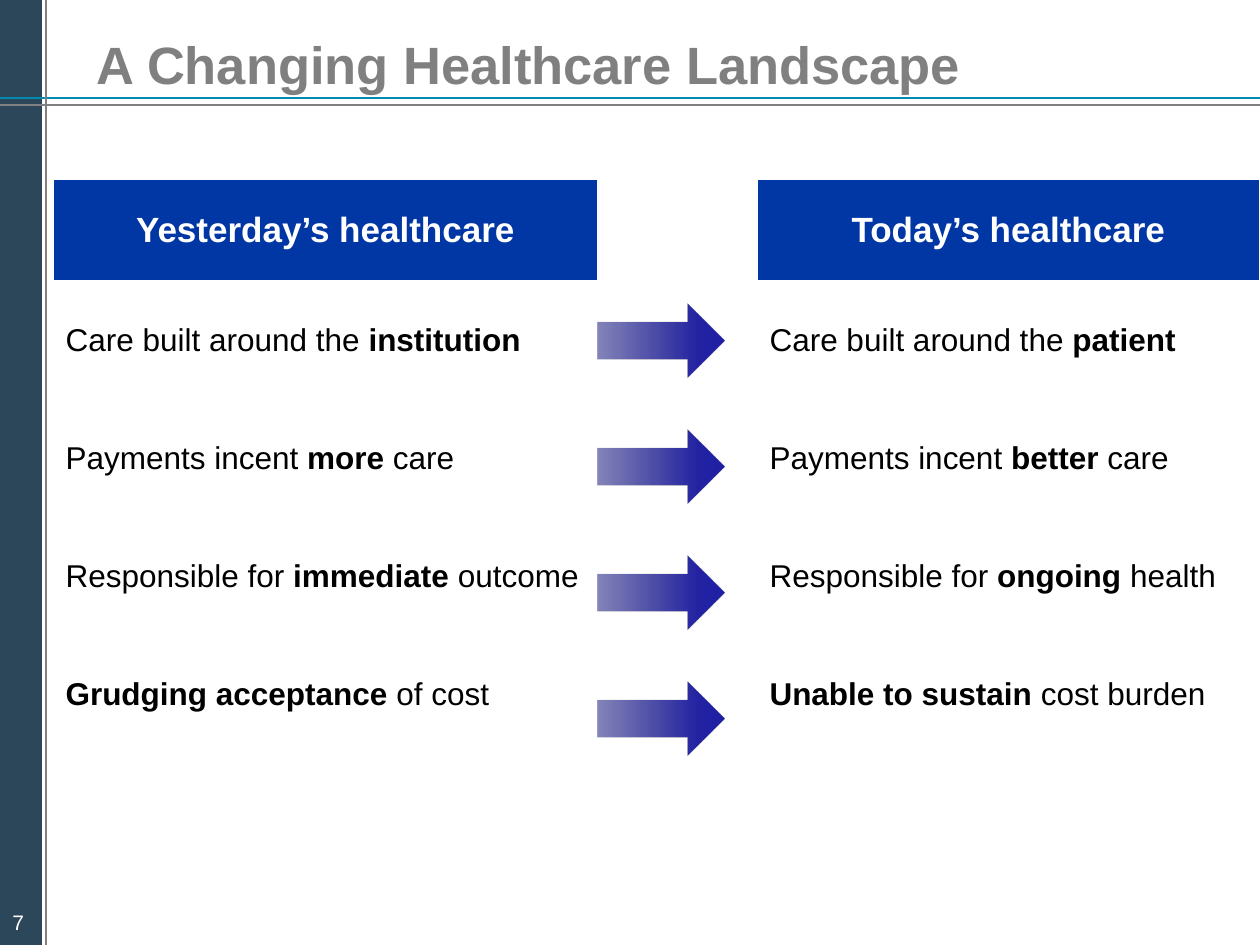
from dataclasses import dataclass

from lxml.etree import SubElement
from pptx import Presentation
from pptx.dml.color import RGBColor
from pptx.enum.shapes import MSO_CONNECTOR, MSO_SHAPE
from pptx.enum.text import MSO_ANCHOR, PP_ALIGN
from pptx.oxml.ns import qn
from pptx.util import Emu, Pt

TITLE = "A Changing Healthcare Landscape"
PAGE_NUMBER = "7"
HEADERS = ("Yesterday’s healthcare", "Today’s healthcare")
# Each statement is a list of (text, bold) spans.
COMPARISONS = [
    ([("Care built around the ", False), ("institution", True)],
     [("Care built around the ", False), ("patient", True)]),
    ([("Payments incent ", False), ("more", True), (" care", False)],
     [("Payments incent ", False), ("better", True), (" care", False)]),
    ([("Responsible for ", False), ("immediate ", True), ("outcome", False)],
     [("Responsible for ", False), ("ongoing", True), (" health", False)]),
    ([("Grudging acceptance ", True), ("of cost", False)],
     [("Unable to sustain ", True), ("cost burden", False)]),
]


@dataclass(frozen=True)
class Theme:
    font: str = "Arial"
    sidebar: str = "2C465A"
    gray: str = "808080"
    teal: str = "008AB0"
    header: str = "0037A4"
    white: str = "FFFFFF"
    black: str = "000000"
    # (position %, colour, opacity %)
    arrow: tuple = ((0, "1B1B7E", 53), (80, "2323A3", 100), (100, "2020A6", 100))
    title_size: int = 30
    header_size: int = 20
    body_size: int = 18
    number_size: int = 12
    rule_width: float = 1.5
    border: int = 1
    heavy_border: int = 3


THEME = Theme()
PAGE_WIDTH, PAGE_HEIGHT = 1260, 945
RULES = [  # start, end, colour
    ((0, 105), (PAGE_WIDTH, 105), THEME.gray),
    ((0, 98), (PAGE_WIDTH, 98), THEME.teal),
    ((46, 0), (46, PAGE_HEIGHT), THEME.gray),
]
TABLE_LEFT, TABLE_TOP = 53, 179
COLUMN_WIDTHS = (545, 159, 503)
HEADER_HEIGHT, ROW_HEIGHT = 103, 118
ARROW_TOP, ARROW_STEP = 304, 126
ARROW_WIDTH, ARROW_HEIGHT = 126, 74


def px(value):
    return Emu(round(value * 914400 / 126))


def box_px(*values):
    return [px(value) for value in values]


def color(value):
    return RGBColor.from_string(value)


def write(frame, spans, size, ink, align=PP_ALIGN.LEFT):
    """Fill the first paragraph with (text, bold) spans."""
    para = frame.paragraphs[0]
    para.alignment = align
    for text, bold in spans:
        span = para.add_run()
        span.text = text
        font = span.font
        font.name, font.size, font.bold = THEME.font, Pt(size), bold
        font.color.rgb = color(ink)


def add_rule(page, start, end, ink):
    rule = page.shapes.add_connector(
        MSO_CONNECTOR.STRAIGHT, *box_px(*start), *box_px(*end))
    rule.line.color.rgb = color(ink)
    rule.line.width = Pt(THEME.rule_width)
    SubElement(rule._element.spPr, qn("a:effectLst"))


def add_plain_shape(page, kind, *place):
    shape = page.shapes.add_shape(kind, *box_px(*place))
    shape.shadow.inherit = False
    shape.line.fill.background()
    return shape


def add_arrow(page, top):
    left = TABLE_LEFT + COLUMN_WIDTHS[0]
    arrow = add_plain_shape(
        page, MSO_SHAPE.RIGHT_ARROW, left, top, ARROW_WIDTH, ARROW_HEIGHT)
    arrow.fill.gradient()
    arrow.fill.gradient_angle = 0
    stops = arrow._element.spPr.find(".//" + qn("a:gsLst"))
    for stop in list(stops):
        stops.remove(stop)
    for position, ink, opacity in THEME.arrow:
        stop = SubElement(stops, qn("a:gs"), pos=str(position * 1000))
        tint = SubElement(stop, qn("a:srgbClr"), val=ink)
        if opacity < 100:
            SubElement(tint, qn("a:alpha"), val=str(opacity * 1000))


def style_cell(cell, fill, top, bottom):
    cell.vertical_anchor = MSO_ANCHOR.MIDDLE
    properties = cell._tc.get_or_add_tcPr()
    widths = {"L": THEME.border, "R": THEME.border, "T": top, "B": bottom}
    for side, width in widths.items():
        edge = SubElement(properties, qn(f"a:ln{side}"), w=str(Pt(width)))
        paint = SubElement(edge, qn("a:solidFill"))
        SubElement(paint, qn("a:srgbClr"), val=THEME.white)
    cell.fill.solid()
    cell.fill.fore_color.rgb = color(fill)


def add_comparison(page):
    height = HEADER_HEIGHT + ROW_HEIGHT * len(COMPARISONS)
    table = page.shapes.add_table(
        len(COMPARISONS) + 1, len(COLUMN_WIDTHS),
        *box_px(TABLE_LEFT, TABLE_TOP, sum(COLUMN_WIDTHS), height)).table
    for column, width in zip(table.columns, COLUMN_WIDTHS):
        column.width = px(width)
    for index, row in enumerate(table.rows):
        row.height = px(ROW_HEIGHT if index else HEADER_HEIGHT)
        top = THEME.heavy_border if index == 1 else THEME.border
        bottom = THEME.border if index else THEME.heavy_border
        for column, cell in enumerate(row.cells):
            is_header = index == 0 and column != 1
            style_cell(cell, THEME.header if is_header else THEME.white, top, bottom)
    for column, text in zip((0, 2), HEADERS):
        write(table.cell(0, column).text_frame, [(text, True)],
              THEME.header_size, THEME.white, PP_ALIGN.CENTER)
    for index, statements in enumerate(COMPARISONS, start=1):
        for column, spans in zip((0, 2), statements):
            write(table.cell(index, column).text_frame, spans,
                  THEME.body_size, THEME.black)


def main():
    deck = Presentation()
    deck.slide_width, deck.slide_height = px(PAGE_WIDTH), px(PAGE_HEIGHT)
    page = deck.slides.add_slide(deck.slide_layouts[5])

    sidebar = add_plain_shape(page, MSO_SHAPE.RECTANGLE, 0, 0, 42, PAGE_HEIGHT)
    sidebar.fill.solid()
    sidebar.fill.fore_color.rgb = color(THEME.sidebar)
    for start, end, ink in RULES:
        add_rule(page, start, end, ink)

    title = page.shapes.title
    title.left, title.top, title.width, title.height = box_px(84, 22, 1113, 84)
    title.text_frame.vertical_anchor = MSO_ANCHOR.MIDDLE
    write(title.text_frame, [(TITLE, True)], THEME.title_size, THEME.gray)

    add_comparison(page)
    number = page.shapes.add_textbox(*box_px(0, 903, 53, 42))
    number.text_frame.word_wrap = True
    write(number.text_frame, [(PAGE_NUMBER, False)], THEME.number_size, THEME.white)
    for index in range(len(COMPARISONS)):
        add_arrow(page, ARROW_TOP + index * ARROW_STEP)

    deck.save("out.pptx")


if __name__ == "__main__":
    main()
